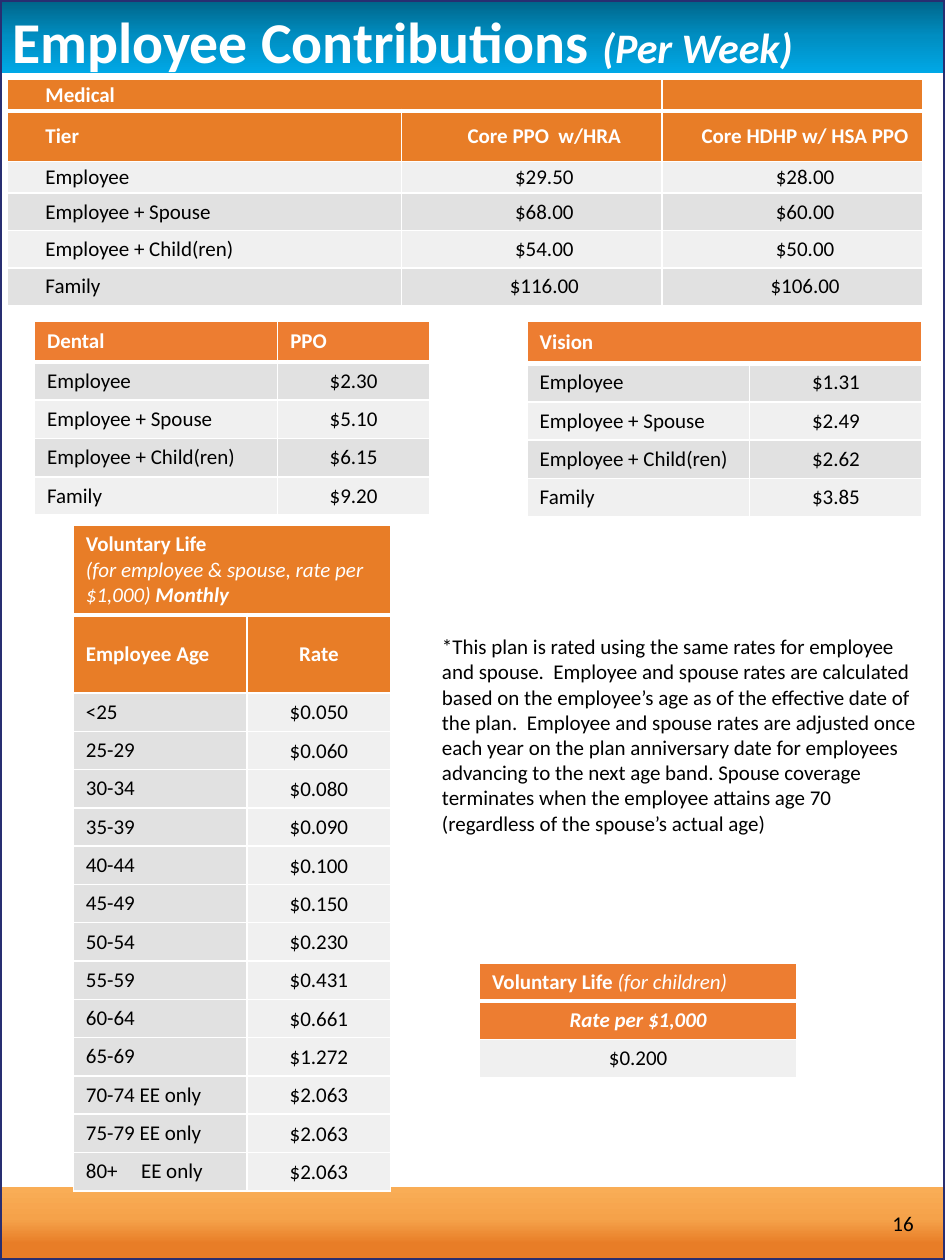
from dataclasses import dataclass
from typing import Callable, NamedTuple, Union

from lxml.etree import SubElement
from pptx import Presentation
from pptx.dml.color import RGBColor
from pptx.enum.shapes import MSO_SHAPE as Shape
from pptx.enum.text import MSO_ANCHOR as Anchor, PP_ALIGN as Align
from pptx.oxml.ns import qn
from pptx.util import Pt


# Theme: colours, font and type sizes
@dataclass(frozen=True)
class Theme:
    font: str = "Calibri"
    title: float = 33
    subtitle: float = 24
    body: float = 12
    white: str = "FFFFFF"
    black: str = "000000"
    frame: str = "282E71"
    orange: str = "E87D27"
    coral: str = "ED7D31"
    light: str = "F0F0F0"
    dark: str = "E1E1E1"
    sky: tuple = ((0, "006488"), (50, "008EC2"), (100, "00A8E6"))
    sunset: tuple = ((1, "F9AD56"), (44, "F5A24A"), (78, "E87D27"))


T = Theme()
PAGE_W, PAGE_H, BAND_H = 540, 720, 41.8
ROW_H = 21.9


class Run(NamedTuple):
    text: str
    bold: bool = False
    italic: bool = False
    size: float = T.body


Cell = Union[str, list[list[Run]]]  # plain text, or paragraphs of runs


def light_first(row: int, col: int) -> str:
    return T.dark if row % 2 else T.light


def dark_first(row: int, col: int) -> str:
    return T.light if row % 2 else T.dark


def by_column(row: int, col: int) -> str:
    return T.light if col else T.dark


@dataclass
class RateTable:
    left: float
    top: float
    cols: list[float]
    heights: list[float]
    cells: list[list[Cell]]
    shade: Callable[[int, int], str]
    accent: str = T.coral
    headers: int = 1
    span: int = 1
    centred_from: int = 1
    margins: tuple = (7.2, 3.6, 7.2, 3.6)
    rate_margins: tuple = ()


def add_runs(p, runs: list[Run], color: str) -> None:
    for run in runs:
        r = p.add_run()
        r.text = run.text
        f = r.font
        f.name, f.size, f.bold, f.italic = T.font, Pt(run.size), run.bold, run.italic
        f.color.rgb = RGBColor.from_string(color)


def add_text(s, left, top, width, height, runs: list[Run], color: str,
             align=Align.LEFT, margin_top: float = 3.6):
    tf = s.shapes.add_textbox(Pt(left), Pt(top), Pt(width), Pt(height)).text_frame
    tf.word_wrap = True
    tf.margin_top = Pt(margin_top)
    p = tf.paragraphs[0]
    p.alignment = align
    add_runs(p, runs, color)
    return p


def add_rect(s, top: float, height: float):
    sp = s.shapes.add_shape(Shape.RECTANGLE, 0, Pt(top), Pt(PAGE_W), Pt(height))
    sp.shadow.inherit = False
    return sp


def add_band(s, top: float, stops: tuple) -> None:
    sp = add_rect(s, top, BAND_H)
    sp.line.fill.background()
    sp.fill.gradient()
    sp.fill.gradient_angle = 270
    gs_list = next(sp._element.iter(qn("a:gsLst")))
    for gs in list(gs_list):
        gs_list.remove(gs)
    for pos, color in stops:
        gs = SubElement(gs_list, qn("a:gs"), pos=str(pos * 1000))
        SubElement(gs, qn("a:srgbClr"), val=color)


def set_borders(cell, top: float, bottom: float) -> None:
    tc_pr = cell._tc.get_or_add_tcPr()
    for i, (side, width) in enumerate((("L", 1), ("R", 1), ("T", top), ("B", bottom))):
        ln = SubElement(tc_pr, qn(f"a:ln{side}"), w=str(Pt(width)))
        fill = SubElement(ln, qn("a:solidFill"))
        SubElement(fill, qn("a:srgbClr"), val=T.white)
        tc_pr.remove(ln)
        tc_pr.insert(i, ln)  # borders come before the fill


def fill_cell(cell, t: RateTable, row: int, col: int) -> None:
    head = row < t.headers
    content = t.cells[row][col]
    cell.fill.solid()
    cell.fill.fore_color.rgb = RGBColor.from_string(
        t.accent if head else t.shade(row - t.headers, col))
    set_borders(cell, 3 if row == 1 else 1, 3 if row == 0 else 1)
    margins = t.rate_margins if t.rate_margins and col and not head else t.margins
    cell.margin_left, cell.margin_top, cell.margin_right, cell.margin_bottom = map(Pt, margins)
    cell.vertical_anchor = Anchor.MIDDLE

    tf = cell.text_frame
    if not content:
        SubElement(tf.paragraphs[0]._p, qn("a:endParaRPr"), sz=str(T.body * 100))
        return
    paragraphs = [[Run(content, bold=head)]] if isinstance(content, str) else content
    for i, runs in enumerate(paragraphs):
        p = tf.add_paragraph() if i else tf.paragraphs[0]
        p.alignment = Align.CENTER if row and col >= t.centred_from else Align.LEFT
        add_runs(p, runs, T.white if head else T.black)
        if any("\t" in run.text for run in runs):
            tabs = SubElement(p._p.get_or_add_pPr(), qn("a:tabLst"))
            SubElement(tabs, qn("a:tab"), pos=str(Pt(31.5)), algn="l")


def add_rate_table(s, t: RateTable) -> None:
    table = s.shapes.add_table(len(t.heights), len(t.cols), Pt(t.left), Pt(t.top),
                               Pt(sum(t.cols)), Pt(sum(t.heights))).table
    table.first_row = table.horz_banding = False
    for column, width in zip(table.columns, t.cols):
        column.width = Pt(width)
    for row, height in enumerate(t.heights):
        table.rows[row].height = Pt(height)
        for col in range(len(t.cols)):
            fill_cell(table.cell(row, col), t, row, col)
    if t.span > 1:
        table.cell(0, 0).merge(table.cell(0, t.span - 1))


# Rates
TIERS = ["Employee", "Employee + Spouse", "Employee + Child(ren)", "Family"]
AGES = ["<25", *(f"{a}-{a + 4}" for a in range(25, 70, 5)),
        "70-74 EE only", "75-79 EE only", "80+\tEE only"]
LIFE = ["$0.050", "$0.060", "$0.080", "$0.090", "$0.100", "$0.150", "$0.230",
        "$0.431", "$0.661", "$1.272", "$2.063", "$2.063", "$2.063"]


def tier_rows(*rates: list[str]) -> list[list[Cell]]:
    return [list(row) for row in zip(TIERS, *rates)]


TABLES = [
    RateTable(4.4, 45.4, [225, 149, 149], [18, 29, 18] + [21.4] * 3,
              [["Medical", "", ""], ["Tier", "Core PPO  w/HRA", "Core HDHP w/ HSA PPO"]]
              + tier_rows(["$29.50", "$68.00", "$54.00", "$116.00"],
                          ["$28.00", "$60.00", "$50.00", "$106.00"]),
              light_first, T.orange, headers=2, span=2, margins=(21.6, 0, 7.2, 0)),
    RateTable(19.7, 183.8, [139, 86.8], [23] + [ROW_H] * 4,
              [["Dental", "PPO"]] + tier_rows(["$2.30", "$5.10", "$6.15", "$9.20"]),
              dark_first),
    RateTable(301.2, 183.8, [127.2, 98.6], [24] + [ROW_H] * 4,
              [["Vision", ""]] + tier_rows(["$1.31", "$2.49", "$2.62", "$3.85"]),
              dark_first, span=2),
    RateTable(41.9, 300.2, [99.4, 82], [51.2, 44.6] + [ROW_H] * len(AGES),
              [[[[Run("Voluntary Life", True)],
                 [Run("(for employee & spouse, rate per $1,000) ", italic=True),
                  Run("Monthly", True, True)]], ""],
               ["Employee Age", "Rate"]] + [list(row) for row in zip(AGES, LIFE)],
              by_column, T.orange, headers=2, span=2, rate_margins=(0.7, 0.7, 0.7, 0)),
    RateTable(274, 550.2, [181.4], [ROW_H] * 3,
              [[[[Run("Voluntary Life ", True), Run("(for children)", italic=True)]]],
               [[[Run("Rate per $1,000", True, True)]]], ["$0.200"]],
              light_first, headers=2, centred_from=0),
]

NOTE = ("*This plan is rated using the same rates for employee and spouse.  Employee and "
        "spouse rates are calculated based on the employee’s age as of the effective date "
        "of the plan.  Employee and spouse rates are adjusted once each year on the plan "
        "anniversary date for employees advancing to the next age band. Spouse coverage "
        "terminates when the employee attains age 70 (regardless of the spouse’s actual age)")


def main() -> None:
    prs = Presentation()
    prs.slide_width, prs.slide_height = Pt(PAGE_W), Pt(PAGE_H)
    s = prs.slides.add_slide(prs.slide_layouts[6])

    # Bands and page frame
    add_band(s, PAGE_H - BAND_H, T.sunset)
    add_band(s, 0, T.sky)
    frame = add_rect(s, 0, PAGE_H)
    frame.fill.background()
    frame.line.color.rgb = RGBColor.from_string(T.frame)
    frame.line.width = Pt(2.5)

    # Title
    p = add_text(s, 0, 0, PAGE_W, 74.2,
                 [Run("Employee Contributions ", True, size=T.title),
                  Run("(Per Week)", True, True, T.subtitle)], T.white, margin_top=8)
    p.line_spacing = 0.9

    # Rate tables, note and page number
    for t in TABLES:
        add_rate_table(s, t)
    add_text(s, 245.5, 358.6, 285.8, 123.8, [Run(NOTE)], T.black)
    add_text(s, 407.5, 688.3, 121.7, 23.8, [Run("16")], T.black, Align.RIGHT)

    prs.save("out.pptx")


if __name__ == "__main__":
    main()
